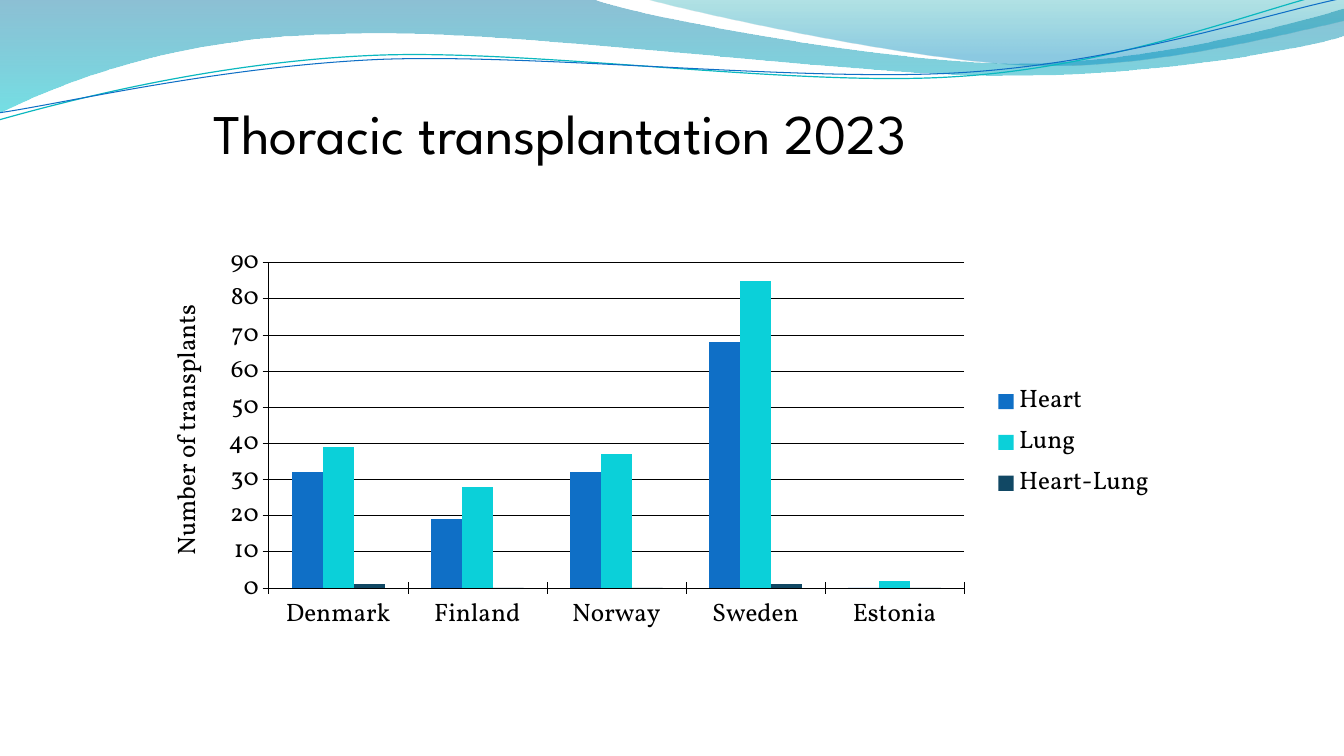
import math
from dataclasses import dataclass

import pptx
import pptx.chart.data
import pptx.dml.color
import pptx.enum.chart
import pptx.enum.text
import pptx.oxml
import pptx.oxml.ns
import pptx.util
from lxml import etree

Inches = pptx.util.Inches
Pt = pptx.util.Pt
qn = pptx.oxml.ns.qn


@dataclass(frozen=True)
class Theme:
    text: str = "000000"
    blue: str = "0F6FC6"
    cyan: str = "0BD0D9"
    navy: str = "114864"
    teal_line: str = "0AB8BF"
    wave: tuple = ((0, "0074A1", 45), (1, "00C6CF", 55))
    crest: tuple = ((0, "00A1A9", 30), (0.8, "008BBF", 45))
    heading_font: str = "League Spartan"
    chart_font: str = "Vollkorn"
    heading_size: int = 40
    chart_size: int = 18
    axis_width: float = 0.25


def rgb(color):
    return pptx.dml.color.RGBColor.from_string(color)


def turned(point, pivot, degrees):
    angle = math.radians(degrees)
    dx, dy = point[0] - pivot[0], point[1] - pivot[1]
    return (pivot[0] + dx * math.cos(angle) - dy * math.sin(angle),
            pivot[1] + dx * math.sin(angle) + dy * math.cos(angle))


class Composer:
    def __init__(self, page, theme):
        self.page = page
        self.theme = theme

    def outline(self, start, segments, close, pivot=(0, 0), rotation=0):
        points = [start]
        for segment in segments:
            points.extend(zip(segment[::2], segment[1::2]))
        points = [turned(point, pivot, -rotation) for point in points]
        points = [(Inches(x), Inches(y)) for x, y in points]
        builder = self.page.shapes.build_freeform(*points[0])
        builder.add_line_segments(points[1:], close=close)
        shape = builder.convert_to_shape()
        shape.shadow.inherit = False
        shape.rotation = rotation
        lines = iter(list(shape._element.spPr.iter(qn("a:lnTo"))))
        for segment in segments:
            line = next(lines)
            if len(segment) == 6:
                line.addprevious(bezier := etree.Element(qn("a:cubicBezTo")))
                for part in (line, next(lines), next(lines)):
                    bezier.append(part[0])
                    part.getparent().remove(part)
        return shape

    def band(self, start, segments, stops):
        shape = self.outline(start, segments, True)
        shape.line.fill.background()
        shape.fill.gradient()
        shape.fill.gradient_angle = 270
        for stop, (position, color, _) in zip(shape.fill.gradient_stops, stops):
            stop.position = position
            stop.color.rgb = rgb(color)
        colors = shape._element.spPr.iter(qn("a:srgbClr"))
        for element, (_, _, opacity) in zip(colors, stops):
            etree.SubElement(element, qn("a:alpha")).set("val", str(opacity * 1000))

    def curve(self, start, segments, pivot, color, width):
        shape = self.outline(start, segments, False, pivot, 357.3)
        shape.fill.background()
        shape.line.color.rgb = rgb(color)
        shape.line.width = Pt(width)

    def style(self, font, name, size):
        font.name = name
        font.size = Pt(size)
        font.bold = False
        font.color.rgb = rgb(self.theme.text)

    def heading(self, text, left, top, width, height):
        box = self.page.shapes.add_textbox(
            Inches(left), Inches(top), Inches(width), Inches(height))
        box.text_frame.word_wrap = True
        box.text_frame.vertical_anchor = pptx.enum.text.MSO_ANCHOR.TOP
        para = box.text_frame.paragraphs[0]
        para.line_spacing = 0.8
        span = para.add_run()
        span.text = text
        self.style(span.font, self.theme.heading_font, self.theme.heading_size)

    def place(self, parent, index, **values):
        layout = parent.find(qn("c:layout"))
        if layout is None:
            layout = etree.Element(qn("c:layout"))
            parent.insert(index, layout)
        manual = etree.SubElement(layout, qn("c:manualLayout"))
        for name, value in values.items():
            etree.SubElement(manual, qn(f"c:{name}")).set("val", str(value))

    def axis(self, axis):
        axis.major_tick_mark = pptx.enum.chart.XL_TICK_MARK.CROSS
        axis.minor_tick_mark = pptx.enum.chart.XL_TICK_MARK.NONE
        self.style(axis.tick_labels.font, self.theme.chart_font, self.theme.chart_size)
        self.thin_line(axis.format.line)

    def thin_line(self, line):
        line.color.rgb = rgb(self.theme.text)
        line.width = Pt(self.theme.axis_width)

    def columns(self, categories, series, value_title, left, top, width, height):
        data = pptx.chart.data.CategoryChartData()
        data.categories = categories
        for name, values, _ in series:
            data.add_series(name, values)
        chart = self.page.shapes.add_chart(
            pptx.enum.chart.XL_CHART_TYPE.COLUMN_CLUSTERED,
            Inches(left), Inches(top), Inches(width), Inches(height), data).chart
        self.style(chart.font, self.theme.chart_font, self.theme.chart_size)
        chart.has_title = False

        plot = chart.plots[0]
        plot.gap_width = 150
        plot.vary_by_categories = False
        for bars, (_, _, color) in zip(plot.series, series):
            bars.format.fill.solid()
            bars.format.fill.fore_color.rgb = rgb(color)

        self.axis(chart.category_axis)
        value_axis = chart.value_axis
        self.axis(value_axis)
        value_axis.has_major_gridlines = True
        self.thin_line(value_axis.major_gridlines.format.line)

        title = value_axis.axis_title
        span = title.text_frame.paragraphs[0].add_run()
        span.text = value_title
        self.style(span.font, self.theme.chart_font, self.theme.chart_size)
        body = title._element.find(".//" + qn("a:bodyPr"))
        body.set("rot", "-5400000")
        body.set("vert", "horz")
        self.place(title._element, 1, xMode="edge", yMode="edge", x=0.01, y=0.17)

        chart.has_legend = True
        chart.legend.position = pptx.enum.chart.XL_LEGEND_POSITION.RIGHT
        chart.legend.include_in_layout = False
        self.style(chart.legend.font, self.theme.chart_font, self.theme.chart_size)
        area = chart._chartSpace.find(".//" + qn("c:plotArea"))
        self.place(area, 0, layoutTarget="inner", xMode="edge", yMode="edge",
                   x=0.114, y=0.083, w=0.687, h=0.754)


def main():
    theme = Theme()
    deck = pptx.Presentation()
    deck.slide_width = Inches(13.33)
    deck.slide_height = Inches(7.5)
    page = deck.slides.add_slide(deck.slide_layouts[6])
    composer = Composer(page, theme)

    composer.band((0, 0), [
        (5.87, -0.01),
        (6.34, 0.17, 8.84, 0.63, 10.11, 0.63),
        (11.37, 0.63, 12.77, 0.26, 13.33, 0.09),
        (13.34, 0.36),
        (13.11, 0.44, 11.59, 0.76, 9.94, 0.75),
        (8.29, 0.75, 5.09, 0.28, 3.43, 0.34),
        (1.72, 0.36, 0.61, 0.83, -0.02, 1.13),
        (0, 0),
    ], theme.wave)
    composer.band((6.38, -0.01), [
        (6.79, 0.11, 9.09, 0.62, 10.25, 0.65),
        (11.4, 0.69, 12.82, 0.32, 13.33, 0.21),
        (13.33, 0),
        (6.38, -0.01),
    ], theme.crest)
    composer.curve((-0.01, 1.19), [
        (0.63, 1.01, 2.1, 0.62, 3.69, 0.55),
        (5.27, 0.48, 7.89, 0.87, 9.49, 0.76),
        (11.1, 0.66, 12.51, 0.08, 13.3, -0.1),
    ], (6.65, 0.58), theme.teal_line, 0.85)
    composer.curve((-0.01, 1.12), [
        (0.62, 1.03, 2.18, 0.66, 3.77, 0.59),
        (5.37, 0.53, 7.96, 0.82, 9.55, 0.72),
        (11.14, 0.62, 12.55, 0.14, 13.33, -0.02),
    ], (6.67, 0.59), theme.blue, 0.75)

    composer.heading("Thoracic transplantation 2023", 2.02, 1.06, 8.75, 1.25)
    composer.columns(
        ["Denmark", "Finland", "Norway", "Sweden", "Estonia"],
        [("Heart", (32, 19, 32, 68, 0), theme.blue),
         ("Lung", (39, 28, 37, 85, 2), theme.cyan),
         ("Heart-Lung", (1, 0, 0, 1, 0), theme.navy)],
        "Number of transplants", 1.52, 2.25, 10.04, 4.28)
    deck.save("out.pptx")


if __name__ == "__main__":
    main()
